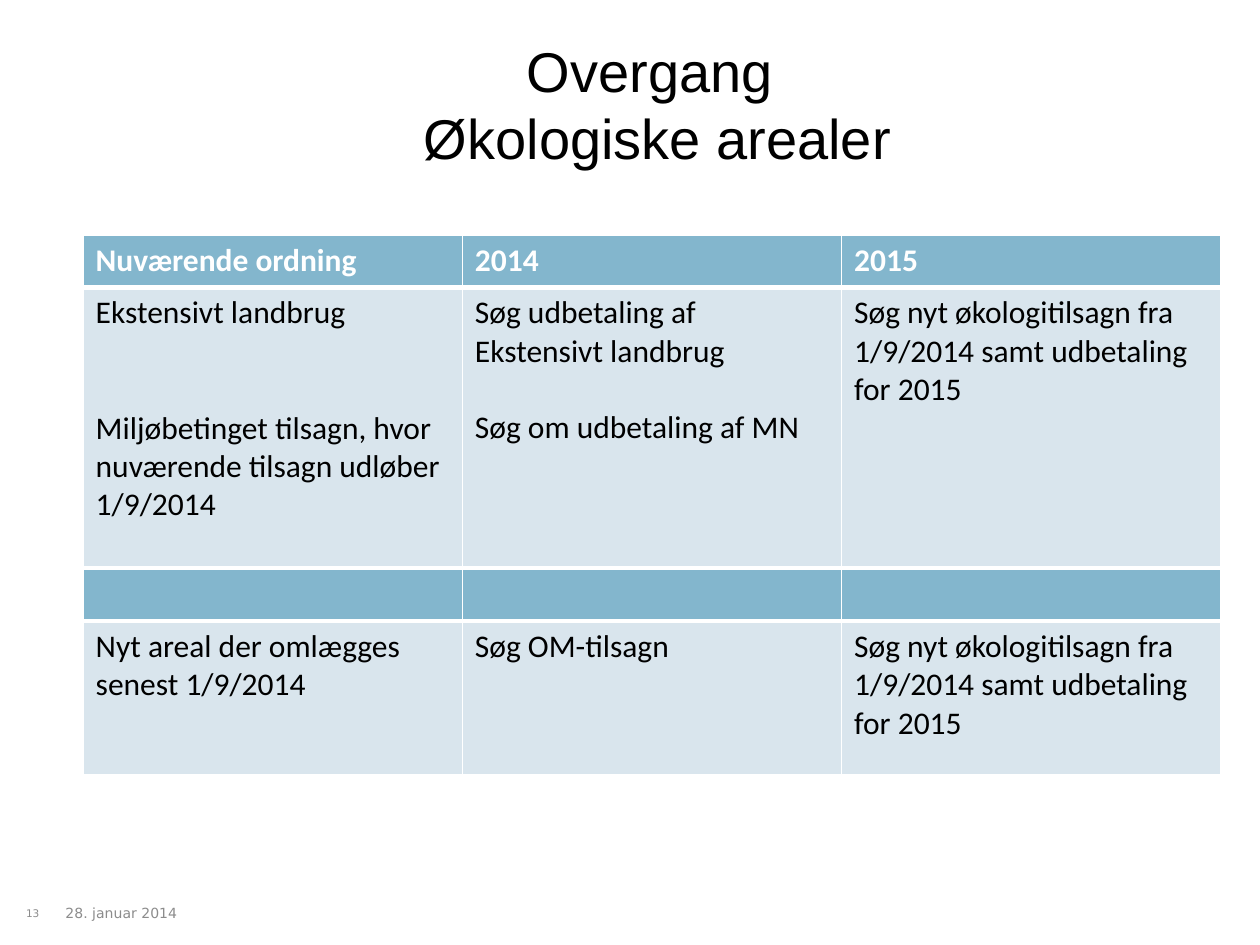
from pptx import Presentation
from pptx.dml.color import RGBColor as Color
from pptx.enum.text import MSO_ANCHOR as Anchor, PP_ALIGN as Align
from pptx.oxml.ns import qn
from pptx.util import Inches, Pt
from lxml.etree import SubElement as Sub


def style(par, name, size, color, bold=False):
    font = par.font
    font.name, font.size, font.bold = name, Pt(size), bold
    font.color.rgb = Color.from_string(color)


def edge(cell, widths):
    props = cell._tc.get_or_add_tcPr()
    for side, width in zip("LRTB", widths):
        line = Sub(props, qn("a:ln" + side), w=str(Pt(width)))
        Sub(Sub(line, qn("a:solidFill")), qn("a:srgbClr"), val="FFFFFF")


deck = Presentation()
deck.slide_width, deck.slide_height = Inches(10), Inches(7.5)
slide = deck.slides.add_slide(deck.slide_layouts[5])

title = slide.shapes.title
title.left, title.top = Inches(1.44), Inches(0.37)
title.width, title.height = Inches(7.56), Inches(0.9)
frame = title.text_frame
frame.vertical_anchor = Anchor.MIDDLE
frame.text = "Overgang \nØkologiske arealer"
for par in frame.paragraphs:
    par.alignment = Align.CENTER
    style(par, "Arial", 32, "000000")

LINE = 22
renew = [("Søg nyt økologitilsagn fra 1/9/2014 samt udbetaling for 2015", 0)]
tables = [
    (1.87, 2.22, [
        [("Nuværende ordning", 0)], [("2014", 0)], [("2015", 0)],
    ], [
        [("Ekstensivt landbrug", 0),
         ("Miljøbetinget tilsagn, hvor nuværende tilsagn udløber 1/9/2014", 2)],
        [("Søg udbetaling af Ekstensivt landbrug", 0),
         ("Søg om udbetaling af MN", 1)],
        renew,
    ]),
    (4.52, 1.22, [[("", 0)]] * 3, [
        [("Nyt areal der omlægges senest 1/9/2014", 0)],
        [("Søg OM-tilsagn", 0)],
        renew,
    ]),
]
looks = [
    ("83B6CD", "FFFFFF", True, (1, 1, 1, 3)),
    ("D9E5ED", "000000", False, (1, 1, 3, 1)),
]
for top, tall, *rows in tables:
    grid = slide.shapes.add_table(
        2, 3, Inches(0.66), Inches(top), Inches(9.03), Inches(0.41 + tall)
    ).table
    grid.rows[0].height, grid.rows[1].height = Inches(0.41), Inches(tall)
    for r, (row, look) in enumerate(zip(rows, looks)):
        fill, ink, bold, widths = look
        for c, items in enumerate(row):
            cell = grid.cell(r, c)
            edge(cell, widths)
            cell.fill.solid()
            cell.fill.fore_color.rgb = Color.from_string(fill)
            cell.text = "\n".join(text for text, gap in items)
            for par, (text, gap) in zip(cell.text_frame.paragraphs, items):
                if gap:
                    par.space_before = Pt(gap * LINE)
                style(par, "Calibri", 18, ink, bold)

notes = [
    ("28. januar 2014", 0.52, 1.94, 8, Align.LEFT),
    ("13", 0, 0.52, 6, Align.CENTER),
]
for text, left, wide, size, align in notes:
    box = slide.shapes.add_textbox(
        Inches(left), Inches(6.99), Inches(wide), Inches(0.51))
    frame = box.text_frame
    frame.word_wrap = True
    frame.vertical_anchor = Anchor.MIDDLE
    frame.margin_left = frame.margin_right = 0
    frame.margin_top = frame.margin_bottom = 0
    frame.text = text
    par = frame.paragraphs[0]
    par.alignment = align
    style(par, "DejaVu Sans", size, "8C8C8C")

deck.save("out.pptx")
